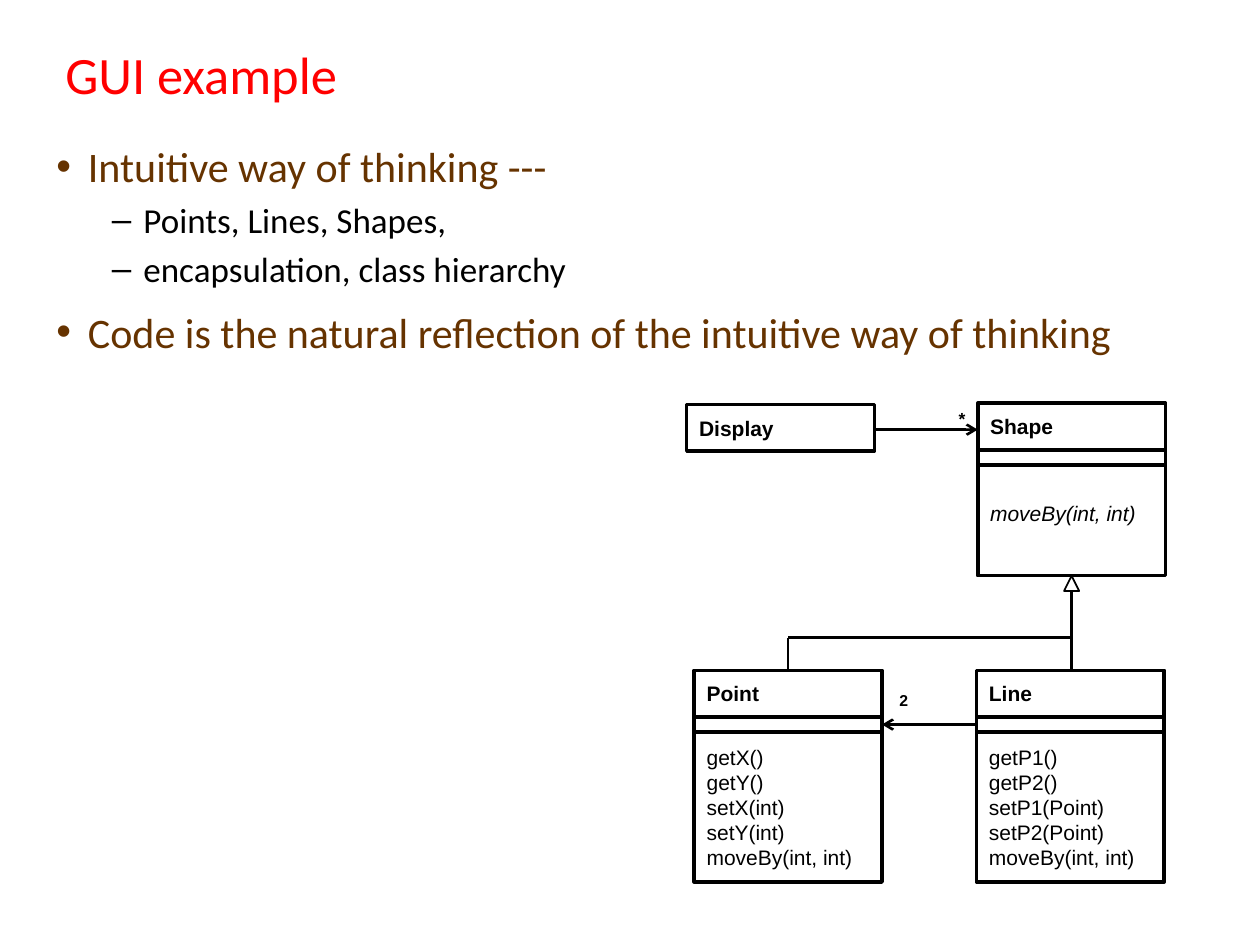
from dataclasses import dataclass

from lxml import etree
from pptx import Presentation
from pptx import util as u
from pptx.dml import color
from pptx.enum import shapes, text
from pptx.oxml import ns


@dataclass(frozen=True)
class Theme:
    red: color.RGBColor = color.RGBColor(0xFF, 0x00, 0x00)
    brown: color.RGBColor = color.RGBColor(0x66, 0x33, 0x00)
    black: color.RGBColor = color.RGBColor(0x00, 0x00, 0x00)
    white: color.RGBColor = color.RGBColor(0xFF, 0xFF, 0xFF)
    body_font: str = "Calibri"
    diagram_font: str = "Arial"
    title_size: int = 30
    bullet_size: int = 24
    sub_bullet_size: int = 20
    class_size: int = 12
    many_size: int = 10
    count_size: int = 9
    box_line: float = 2
    link_line: float = 1.5
    triangle_line: float = 1


THEME = Theme()
CLASS_WIDTH = 1.49
HEADER_HEIGHT = 0.37
STRIP_HEIGHT = 0.12


def add_run(paragraph, words, font, size, ink, bold=False, italic=False):
    run = paragraph.add_run()
    run.text = words
    run.font.name = font
    run.font.size = u.Pt(size)
    run.font.color.rgb = ink
    run.font.bold = bold
    run.font.italic = italic


def add_text_box(slide, box, wrap=True):
    frame = slide.shapes.add_textbox(*map(u.Inches, box)).text_frame
    frame.word_wrap = wrap
    return frame


def add_title(slide, box, words):
    frame = add_text_box(slide, box)
    frame.vertical_anchor = text.MSO_ANCHOR.MIDDLE
    add_run(frame.paragraphs[0], words, THEME.body_font, THEME.title_size, THEME.red)


def set_bullet(paragraph, symbol, margin):
    properties = paragraph._p.get_or_add_pPr()
    properties.set("marL", str(u.Inches(margin)))
    properties.set("indent", str(u.Inches(-0.25)))
    etree.SubElement(properties, ns.qn("a:buFont"), typeface=THEME.diagram_font)
    etree.SubElement(properties, ns.qn("a:buChar"), char=symbol)


def add_bullets(slide, box, items):
    frame = add_text_box(slide, box)
    for index, (level, words) in enumerate(items):
        paragraph = frame.paragraphs[0] if index == 0 else frame.add_paragraph()
        paragraph.level = level
        size, ink, gap, symbol, margin = (
            (THEME.sub_bullet_size, THEME.black, 0.2, "–", 0.69)
            if level
            else (THEME.bullet_size, THEME.brown, 0.4, "•", 0.25)
        )
        paragraph.space_before = u.Pt(size * gap if index else 0)
        set_bullet(paragraph, symbol, margin)
        add_run(paragraph, words, THEME.body_font, size, ink)


def add_outline(slide, box, kind=shapes.MSO_SHAPE.RECTANGLE, width=THEME.box_line):
    shape = slide.shapes.add_shape(kind, *map(u.Inches, box))
    shape.shadow.inherit = False
    shape.fill.background()
    shape.line.color.rgb = THEME.black
    shape.line.width = u.Pt(width)
    return shape


def add_compartment(slide, box, lines, bold=False, italic=False):
    frame = add_outline(slide, box).text_frame
    frame.word_wrap = False
    frame.vertical_anchor = text.MSO_ANCHOR.MIDDLE
    paragraph = frame.paragraphs[0]
    paragraph.alignment = text.PP_ALIGN.LEFT
    for index, line in enumerate(lines):
        if index:
            paragraph.add_line_break()
        add_run(paragraph, line, THEME.diagram_font, THEME.class_size,
                THEME.black, bold, italic)


def add_class(slide, box, name, methods=(), methods_offset=0, abstract=False):
    left, top, width, height = box
    add_compartment(slide, (left, top, width, HEADER_HEIGHT), [name], bold=True)
    if methods:
        methods_box = (left, top + methods_offset, width, height - methods_offset)
        add_compartment(slide, methods_box, methods, italic=abstract)
        add_outline(slide, (left, top + HEADER_HEIGHT, width, STRIP_HEIGHT))


def add_link(slide, start, end, arrow=False):
    link = slide.shapes.add_connector(
        shapes.MSO_CONNECTOR.STRAIGHT, *map(u.Inches, start + end)
    )
    link.line.color.rgb = THEME.black
    link.line.width = u.Pt(THEME.link_line)
    if arrow:
        etree.SubElement(link.line._get_or_add_ln(), ns.qn("a:tailEnd"), type="arrow")
    etree.SubElement(link._element.spPr, ns.qn("a:effectLst"))


def add_multiplicity(slide, box, words, size):
    frame = add_text_box(slide, box)
    add_run(frame.paragraphs[0], words, THEME.diagram_font, size, THEME.black, bold=True)


def add_class_diagram(slide, box):
    left, top, width, height = box
    right = left + width - CLASS_WIDTH
    point_left = left + 0.06
    child_top, child_height = top + 2.12, height - 2.12
    shape_bottom = top + 1.37
    point_center = point_left + CLASS_WIDTH / 2
    line_center = right + CLASS_WIDTH / 2
    branch = top + 1.86

    add_class(slide, (left, top + 0.01, CLASS_WIDTH, HEADER_HEIGHT), "Display")
    add_class(slide, (right, top, CLASS_WIDTH, 1.37), "Shape",
              ["moveBy(int, int)"], HEADER_HEIGHT, abstract=True)
    children = (
        (point_left, "Point", ["getX()", "getY()", "setX(int)", "setY(int)"]),
        (right - 0.01, "Line", ["getP1()", "getP2()", "setP1(Point)", "setP2(Point)"]),
    )
    for child_left, name, methods in children:
        add_class(slide, (child_left, child_top, CLASS_WIDTH, child_height), name,
                  methods + ["moveBy(int, int)"], HEADER_HEIGHT + STRIP_HEIGHT)

    for center in (point_center, line_center):
        add_link(slide, (center, child_top), (center, branch))
    add_link(slide, (point_center, branch), (line_center, branch))
    add_link(slide, (line_center, branch), (line_center, shape_bottom + 0.12))
    triangle = add_outline(
        slide, (line_center - 0.06, shape_bottom, 0.12, 0.12),
        shapes.MSO_SHAPE.ISOSCELES_TRIANGLE, THEME.triangle_line,
    )
    triangle.fill.solid()
    triangle.fill.fore_color.rgb = THEME.white

    add_link(slide, (left + CLASS_WIDTH, top + 0.21), (right, top + 0.21), arrow=True)
    add_link(slide, (right - 0.01, top + 2.55),
             (point_left + CLASS_WIDTH, top + 2.55), arrow=True)
    add_multiplicity(slide, (right - 0.25, top - 0.01, 0.25, 0.27), "*", THEME.many_size)
    add_multiplicity(slide, (point_left + 1.53, top + 2.23, 0.25, 0.25),
                     "2", THEME.count_size)


def main():
    presentation = Presentation()
    presentation.slide_width = u.Inches(10)
    presentation.slide_height = u.Inches(7.5)
    slide = presentation.slides.add_slide(presentation.slide_layouts[6])
    add_title(slide, (0.42, 0.33, 9.08, 0.5), "GUI example")
    add_bullets(slide, (0.35, 1.07, 9.17, 5.67), [
        (0, "Intuitive way of thinking ---"),
        (1, "Points, Lines, Shapes,"),
        (1, "encapsulation, class hierarchy"),
        (0, "Code is the natural reflection of the intuitive way of thinking"),
    ])
    add_class_diagram(slide, (5.45, 3.2, 3.8, 3.8))
    presentation.save("out.pptx")


if __name__ == "__main__":
    main()
